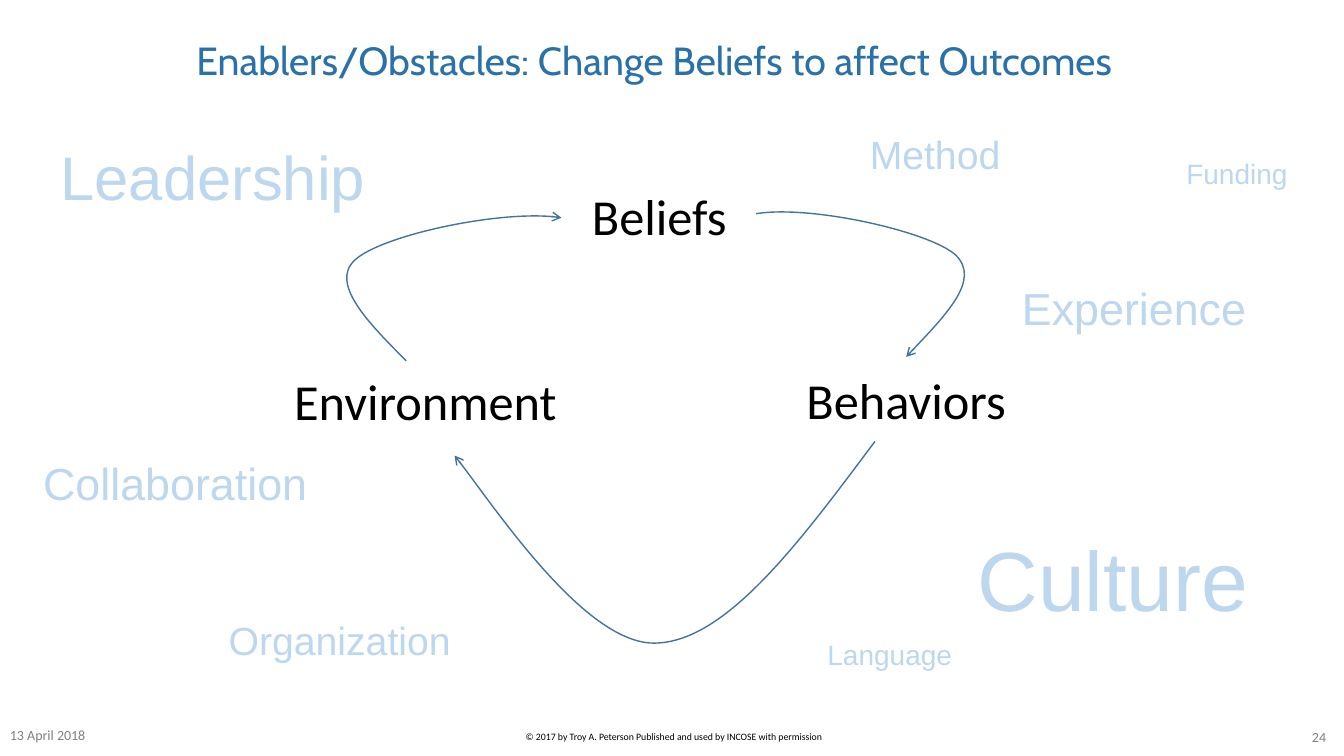
from lxml.etree import SubElement
from pptx import Presentation
from pptx.dml.color import RGBColor
from pptx.enum.text import MSO_ANCHOR, PP_ALIGN
from pptx.oxml.ns import qn
from pptx.util import Inches, Pt

# All places are in cells of a grid with ten columns and ten rows to the inch.
COLS, ROWS = 133.33, 75
BLUE, PALE, LINE, GREY, BLACK = "2971A9", "BDD7EE", "43739E", "808080", "000000"

TITLE = "Enablers/Obstacles: Change Beliefs to affect Outcomes"
COPYRIGHT = "© 2017 by Troy A. Peterson Published and used by INCOSE with permission"
DATE, PAGE = "13 April 2018", "24"

# text, left, top, width
STAGES = [
    ("Beliefs", 50.5, 17.9, 29.8),
    ("Behaviors", 75, 36.1, 29.8),
    ("Environment", 26.4, 36.2, 31.6),
]
# start point, then cubic curves as (control, control, end)
ARROWS = [
    ((40.3, 35.8), [((36.5, 32), (32.7, 28.1), (35.2, 25.8)),
                    ((37.8, 23.4), (50.1, 20.7), (55.7, 21.6))]),
    ((86.8, 43.8), [((79.4, 53.7), (72.1, 63.6), (65.1, 63.8)),
                    ((58.2, 64.1), (48.4, 49.3), (45.1, 45.2))]),
    ((75, 21.2), [((80.5, 20.3), (92.3, 23), (94.8, 25.3)),
                  ((97.3, 27.7), (93.6, 31.5), (89.9, 35.4))]),
]
# text, left, top, width, size
FACTORS = [
    ("Method", 85.3, 12.4, 15.1, 28),
    ("Organization", 21.7, 60.6, 24.3, 28),
    ("Culture", 96, 51.8, 29.2, 60),
    ("Leadership", 5, 13.3, 32.6, 44),
    ("Funding", 116.7, 15, 12.2, 20),
    ("Experience", 100.4, 27.4, 24.4, 32),
    ("Language", 81.1, 62.8, 14.5, 20),
    ("Collaboration", 3.3, 44.7, 28.4, 32),
]


def cells(n):
    return Inches(n / 10)


def rgb(value):
    return RGBColor.from_string(value)


def add_text(shapes, text, left, top, width, height=None, *, size, color=BLACK,
             font="Calibri", align=PP_ALIGN.LEFT, anchor=MSO_ANCHOR.TOP,
             wrap=True, spacing=1.0):
    """Add a one-line text box; without a height it fits the line and its insets."""
    if height is None:
        height = size * 1.2 / 7.2 + 1
    sp = shapes.add_textbox(*map(cells, (left, top, width, height)))
    tf = sp.text_frame
    tf.word_wrap = wrap
    tf.vertical_anchor = anchor
    p = tf.paragraphs[0]
    p.alignment = align
    p.line_spacing = spacing
    r = p.add_run()
    r.text = text
    r.font.name = font
    r.font.size = Pt(size)
    r.font.color.rgb = rgb(color)


def add_curved_arrow(shapes, start, curves):
    """Draw a freeform through the curve ends, then bend each segment."""
    builder = shapes.build_freeform(*map(cells, start))
    builder.add_line_segments(
        [tuple(map(cells, curve[-1])) for curve in curves], close=False)
    sp = builder.convert_to_shape()
    sp.shadow.inherit = False
    sp.fill.background()
    sp.line.color.rgb = rgb(LINE)
    sp.line.width = Pt(1)
    segments = list(sp.element.iter(qn("a:lnTo")))
    for segment, curve in zip(segments, curves):
        segment.tag = qn("a:cubicBezTo")
        segment.remove(segment[0])
        for x, y in curve:
            SubElement(segment, qn("a:pt"), x=str(cells(x) - sp.left),
                       y=str(cells(y) - sp.top))
    SubElement(sp.line._get_or_add_ln(), qn("a:tailEnd"), type="arrow")


def main():
    prs = Presentation()
    prs.slide_width, prs.slide_height = cells(COLS), cells(ROWS)
    shapes = prs.slides.add_slide(prs.slide_layouts[6]).shapes

    add_text(shapes, COPYRIGHT, 48.1, 72, 37.5, size=7, align=PP_ALIGN.CENTER)
    add_text(shapes, TITLE, 18.5, 2.3, 114.8, 7.8, size=28, color=BLUE,
             font="Cabin", anchor=MSO_ANCHOR.MIDDLE, spacing=0.9)

    cycle = shapes.add_group_shape().shapes
    for text, left, top, width in STAGES:
        add_text(cycle, text, left, top, width, size=36, align=PP_ALIGN.CENTER)
    for start, curves in ARROWS:
        add_curved_arrow(cycle, start, curves)

    add_text(shapes, PAGE, 128.3, 71.1, 5.1, 4, size=10, color=GREY,
             align=PP_ALIGN.CENTER, anchor=MSO_ANCHOR.MIDDLE)
    add_text(shapes, DATE, 0, 70.9, 14.9, 4, size=10, color=GREY,
             anchor=MSO_ANCHOR.MIDDLE)

    cloud = shapes.add_group_shape().shapes
    for text, left, top, width, size in FACTORS:
        add_text(cloud, text, left, top, width, size=size, color=PALE,
                 font="Arial", wrap=False)

    prs.save("out.pptx")


if __name__ == "__main__":
    main()
